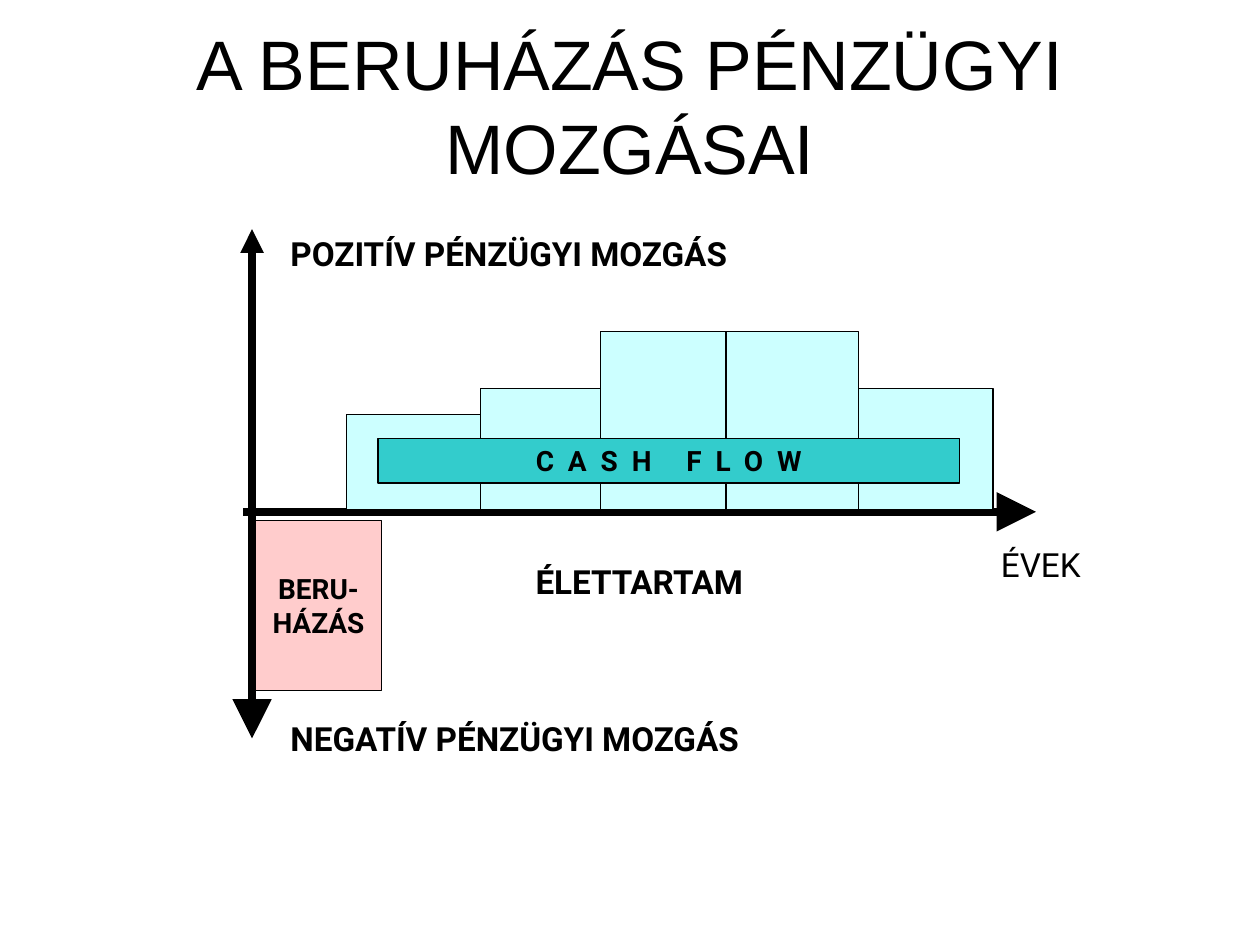
from lxml import etree
from pptx import Presentation
from pptx.dml.color import RGBColor
from pptx.enum.shapes import MSO_CONNECTOR, MSO_SHAPE
from pptx.enum.text import MSO_ANCHOR, MSO_AUTO_SIZE, PP_ALIGN
from pptx.oxml.ns import qn
from pptx.util import Pt

LINE = MSO_CONNECTOR.STRAIGHT
RECT = MSO_SHAPE.RECTANGLE
TOP, MIDDLE = MSO_ANCHOR.TOP, MSO_ANCHOR.MIDDLE
LEFT, CENTER = PP_ALIGN.LEFT, PP_ALIGN.CENTER
FIXED = MSO_AUTO_SIZE.NONE

COLORS = {"ink": "000000", "cost": "FFCCCC", "income": "CCFFFF", "flow": "33CCCC"}


def color(name):
    return RGBColor.from_string(COLORS[name])


def write(shape, text, size=19, font="Roboto", bold=True, align=LEFT,
          anchor=TOP, pad=(4.5, 2.25), track=0):
    """Fill a shape with one paragraph; track is letter spacing in points."""
    frame = shape.text_frame
    frame.auto_size = FIXED
    frame.word_wrap = True
    frame.vertical_anchor = anchor
    frame.margin_left = frame.margin_right = Pt(pad[0])
    frame.margin_top = frame.margin_bottom = Pt(pad[1])
    para = frame.paragraphs[0]
    para.alignment = align
    run = para.add_run()
    run.text = text
    run.font.size = Pt(size)
    run.font.name = font
    run.font.bold = bold
    run.font.color.rgb = color("ink")
    if track:
        run.font._element.set("spc", str(track * 100))


def add_label(slide, text, x, y, wide, **style):
    box = slide.shapes.add_textbox(Pt(x), Pt(y), Pt(wide), Pt(27.5))
    write(box, text, **style)


def add_block(slide, x, y, wide, high, fill):
    block = slide.shapes.add_shape(RECT, Pt(x), Pt(y), Pt(wide), Pt(high))
    block.shadow.inherit = False
    block.fill.solid()
    block.fill.fore_color.rgb = color(fill)
    block.line.color.rgb = color("ink")
    block.line.width = Pt(0.75)
    return block


def add_axis(slide, start, end, **tips):
    """Draw a thick line; tips maps headEnd or tailEnd to an arrow size."""
    axis = slide.shapes.add_connector(LINE, *map(Pt, start + end))
    axis.line.color.rgb = color("ink")
    axis.line.width = Pt(4.5)
    props = axis._element.spPr
    stroke = props.find(qn("a:ln"))
    for tip, size in tips.items():
        etree.SubElement(stroke, qn("a:" + tip), type="triangle", w=size, len=size)
    etree.SubElement(props, qn("a:effectLst"))


def add_title(slide, text, x, y, wide, high):
    title = slide.shapes.title
    title.left, title.top, title.width, title.height = map(Pt, (x, y, wide, high))
    write(title, text, size=40, font="Arial", bold=False, align=CENTER,
          anchor=MIDDLE, pad=(7.2, 3.6))


def add_bars(slide, x, base, bars):
    """Stand touching bars of (width, height) on the base line."""
    for wide, high in bars:
        add_block(slide, x, base - high, wide, high, "income")
        x += wide


def add_chart_area(slide, x, y, wide, high):
    zero = y + 161.5
    add_axis(slide, (x, y), (x, y + high), headEnd="med", tailEnd="lg")
    add_axis(slide, (x - 5, zero), (x + wide, zero), tailEnd="lg")

    add_label(slide, "POZITÍV PÉNZÜGYI MOZGÁS", x + 17.5, y, 312)
    add_label(slide, "NEGATÍV PÉNZÜGYI MOZGÁS", x + 17.5, y + 277, 312)
    add_label(slide, "ÉVEK", x + 423.5, y + 178, 58, bold=False)
    add_label(slide, "ÉLETTARTAM", x + 157.5, y + 187.5, 240)

    cost = add_block(slide, x + 2, zero + 5, 72, 97, "cost")
    write(cost, "BERU-HÁZÁS", size=16, align=CENTER, anchor=MIDDLE)

    add_bars(slide, x + 54, zero - 1.5,
             [(76.5, 54), (68.5, 69), (72, 101.5), (75.5, 101.5), (77, 69)])
    flow = add_block(slide, x + 72, zero - 42, 332.5, 25.5, "flow")
    write(flow, "CASH FLOW", size=16, align=CENTER, anchor=MIDDLE, track=8)


def main():
    deck = Presentation()
    deck.slide_width, deck.slide_height = Pt(720), Pt(540)
    slide = deck.slides.add_slide(deck.slide_layouts[5])
    add_title(slide, "A BERUHÁZÁS PÉNZÜGYI MOZGÁSAI", 0, 15, 720, 90)
    add_chart_area(slide, 144, 131, 448, 291)
    deck.save("out.pptx")


if __name__ == "__main__":
    main()
